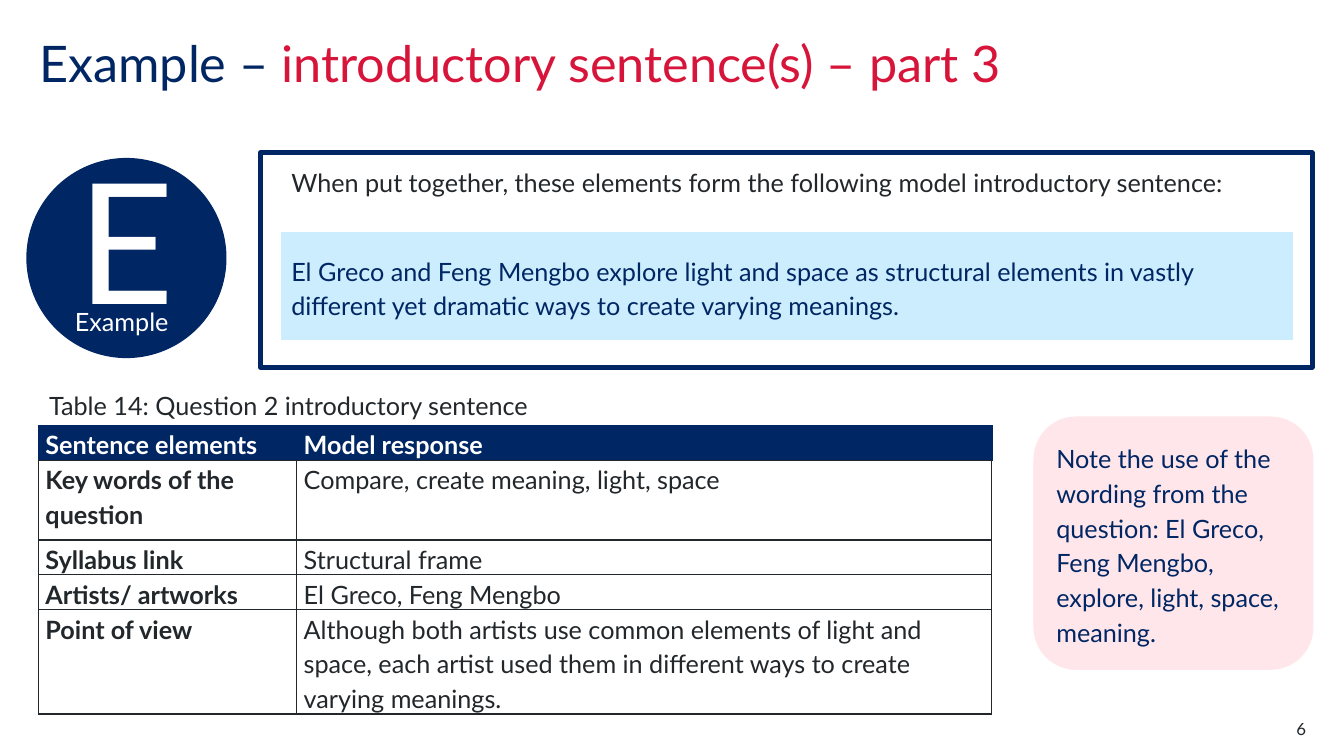
"""Build the slide on the model introductory sentence, part 3."""
from lxml import etree
from pptx import Presentation
from pptx.dml.color import RGBColor
from pptx.enum import shapes, text
from pptx.oxml import ns
from pptx.util import Pt

NAVY = RGBColor(0x00, 0x26, 0x64)
RED = RGBColor(0xD7, 0x15, 0x3A)
INK = RGBColor(0x22, 0x27, 0x2B)
SKY = RGBColor(0xCB, 0xED, 0xFD)
PINK = RGBColor(0xFF, 0xE6, 0xEA)
WHITE = RGBColor(0xFF, 0xFF, 0xFF)
FONT = "Lato"

TITLE = [("Example – ", NAVY), ("introductory sentence(s) – part 3", RED)]
LEAD = "When put together, these elements form the following model introductory sentence:"
MODEL = ("El Greco and Feng Mengbo explore light and space as structural elements "
         "in vastly different yet dramatic ways to create varying meanings.")
CAPTION = "Table 14: Question 2 introductory sentence"
NOTE = ("Note the use of the wording from the question: El Greco, Feng Mengbo, "
        "explore, light, space, meaning.")
ROWS = [
    ("Sentence elements", "Model response"),
    ("Key words of the question", "Compare, create meaning, light, space"),
    ("Syllabus link", "Structural frame"),
    ("Artists/ artworks", "El Greco, Feng Mengbo"),
    ("Point of view", "Although both artists use common elements of light and space, each "
                      "artist used them in different ways to create varying meanings."),
]
COL_WIDTHS = [184.5, 496.5]
ROW_HEIGHTS = [20.2, 56.9, 20.2, 20.2, 65.5]

MIDDLE = text.MSO_ANCHOR.MIDDLE
LEFT, CENTER, RIGHT = text.PP_ALIGN.LEFT, text.PP_ALIGN.CENTER, text.PP_ALIGN.RIGHT
KIND = shapes.MSO_SHAPE


def write(tf, runs, size=18, align=LEFT, spacing=None, bold=False):
    """Fill the first paragraph with (text, colour) runs."""
    p = tf.paragraphs[0]
    p.alignment = align
    if spacing:
        p.line_spacing = spacing
    p.font.name, p.font.size, p.font.bold = FONT, Pt(size), bold
    for words, color in runs:
        r = p.add_run()
        r.text = words
        if len(runs) > 1:
            r.font.color.rgb = color
        else:
            p.font.color.rgb = color


def add_text(slide, box, runs, inset=True, anchor=text.MSO_ANCHOR.TOP, **style):
    """Add a wrapped text box."""
    tf = slide.shapes.add_textbox(*map(Pt, box)).text_frame
    tf.word_wrap, tf.vertical_anchor = True, anchor
    if not inset:
        tf.margin_left = tf.margin_top = tf.margin_right = tf.margin_bottom = 0
    write(tf, runs, **style)


def add_panel(slide, kind, box, fill, line, width=1):
    """Add a filled shape and return its text frame."""
    sp = slide.shapes.add_shape(kind, *map(Pt, box))
    sp.shadow.inherit = False
    sp.fill.solid()
    sp.fill.fore_color.rgb = fill
    sp.line.color.rgb, sp.line.width = line, Pt(width)
    tf = sp.text_frame
    tf.word_wrap, tf.vertical_anchor = True, MIDDLE
    return tf


def set_border(cell, side, color, width):
    """Draw one side of a table cell."""
    ln = etree.SubElement(cell._tc.get_or_add_tcPr(), ns.qn(f"a:ln{side}"), w=str(Pt(width)))
    fill = etree.SubElement(ln, ns.qn("a:solidFill"))
    etree.SubElement(fill, ns.qn("a:srgbClr"), val=str(color))


def add_sentence_table(slide, left, top):
    """Add the table of sentence elements."""
    size = Pt(sum(COL_WIDTHS)), Pt(sum(ROW_HEIGHTS))
    table = slide.shapes.add_table(len(ROWS), len(COL_WIDTHS), Pt(left), Pt(top), *size).table
    for column, width in zip(table.columns, COL_WIDTHS):
        column.width = Pt(width)
    for i, (row, height) in enumerate(zip(ROWS, ROW_HEIGHTS)):
        table.rows[i].height = Pt(height)
        header = i == 0
        for j, words in enumerate(row):
            cell = table.cell(i, j)
            cell.margin_left = cell.margin_right = Pt(5)
            cell.margin_top = cell.margin_bottom = 0
            for side in "LRTB":
                navy = header and side != "B"
                set_border(cell, side, NAVY if navy else INK, 0.5 if navy else 1)
            cell.fill.solid()
            cell.fill.fore_color.rgb = NAVY if header else WHITE
            write(cell.text_frame, [(words, WHITE if header else INK)],
                  spacing=1.15, bold=header or j == 0)


def main():
    """Place every part and save the slide."""
    prs = Presentation()
    prs.slide_width, prs.slide_height = Pt(960), Pt(540)
    slide = prs.slides.add_slide(prs.slide_layouts[6])

    add_text(slide, (28, 28, 793.5, 79), TITLE, inset=False, size=36, spacing=0.9)

    tf = add_panel(slide, KIND.OVAL, (19.3, 113.3, 142, 142), NAVY, NAVY)
    tf.margin_bottom = Pt(32.4)
    write(tf, [("E", WHITE)], size=120, align=CENTER)
    add_text(slide, (53.5, 219, 74, 34.5), [("Example", WHITE)], inset=False)

    add_panel(slide, KIND.RECTANGLE, (186, 109, 751.5, 153.5), WHITE, NAVY, 3)
    add_text(slide, (201, 116, 716.5, 29), [(LEAD, INK)])
    tf = add_panel(slide, KIND.RECTANGLE, (201, 166.3, 722, 76.3), SKY, SKY)
    write(tf, [(MODEL, NAVY)], spacing=1.14)

    add_text(slide, (28, 275, 391, 29), [(CAPTION, INK)], anchor=MIDDLE)
    add_sentence_table(slide, 27.5, 304)

    tf = add_panel(slide, KIND.ROUNDED_RECTANGLE, (738.7, 298, 199, 180), PINK, PINK)
    write(tf, [(NOTE, NAVY)], spacing=1.15)
    add_text(slide, (876, 513.5, 57, 14.5), [("6", INK)], inset=False, size=12, align=RIGHT)

    prs.save("out.pptx")


if __name__ == "__main__":
    main()
